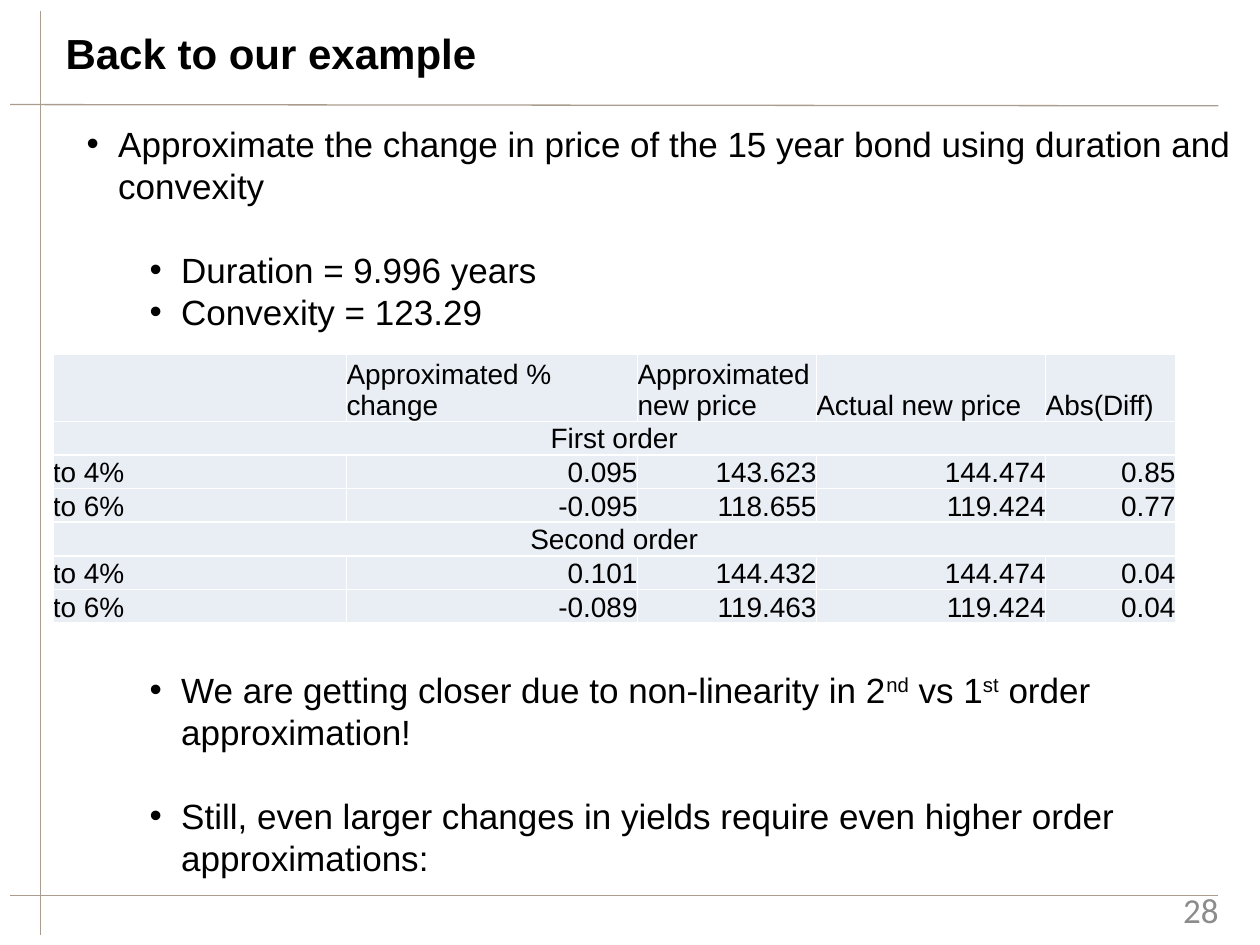
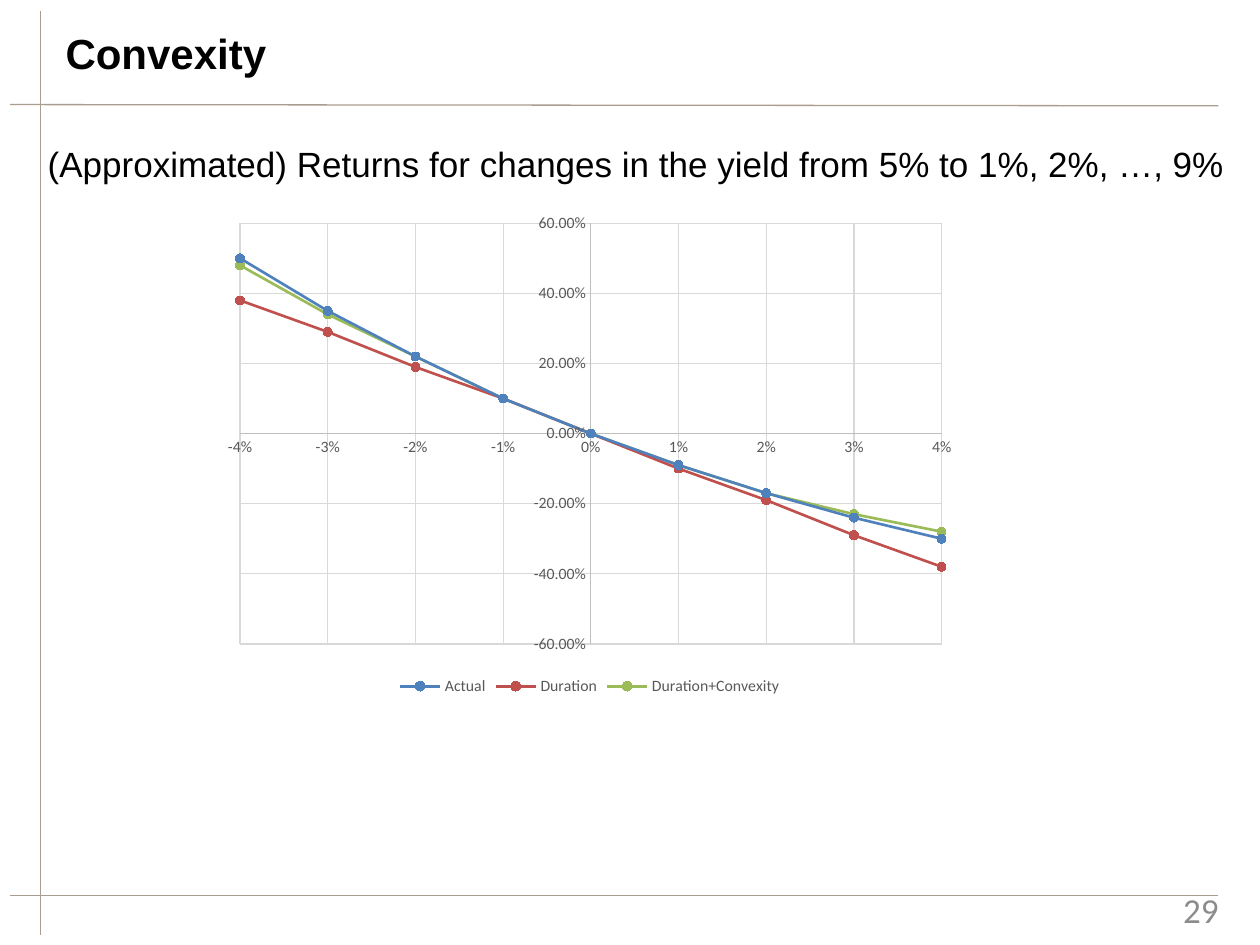
from lxml.etree import SubElement
from pptx import Presentation
from pptx.chart.data import XyChartData
from pptx.dml.color import RGBColor
from pptx.enum.chart import (XL_CHART_TYPE as ChartType, XL_LEGEND_POSITION as LegendPosition,
                             XL_MARKER_STYLE as MarkerStyle, XL_TICK_MARK as TickMark)
from pptx.enum.shapes import MSO_CONNECTOR as Connector
from pptx.enum.text import MSO_ANCHOR as Anchor, MSO_AUTO_SIZE as AutoSize, PP_ALIGN as Align
from pptx.oxml.ns import qn
from pptx.util import Inches, Pt

# Shared look
BLACK, RULE, PAGE_GREY = "000000", "AA9C8F", "8C8C8C"
CELL, WHITE = "E9EDF4", "FFFFFF"
CHART_TEXT, AXIS, GRID = "595959", "BFBFBF", "D9D9D9"
BODY_FONT, CHART_FONT = "Arial", "Calibri"
BODY_SIZE, LINE_PITCH = 20, 24
RULES = [(3.2, 0.9, 3.2, 74.2), (0.8, 8.3, 96.7, 8.4), (0.8, 71.1, 96.7, 71.1)]

# Table and chart content
COLUMN_WIDTHS = [23.3, 23.1, 14.2, 18.2, 10.3]
TABLE_ROWS = [
    ["", "Approximated % change", "Approximated new price", "Actual new price", "Abs(Diff)"],
    ["First order"],
    ["to 4%", "0.095", "143.623", "144.474", "0.85"],
    ["to 6%", "-0.095", "118.655", "119.424", "0.77"],
    ["Second order"],
    ["to 4%", "0.101", "144.432", "144.474", "0.04"],
    ["to 6%", "-0.089", "119.463", "119.424", "0.04"],
]
YIELD_CHANGES = [step / 100 for step in range(-4, 5)]
RETURNS = [
    ("Actual", "4F81BD", [0.5, 0.35, 0.22, 0.1, 0, -0.09, -0.17, -0.24, -0.3]),
    ("Duration", "C0504D", [0.38, 0.29, 0.19, 0.1, 0, -0.1, -0.19, -0.29, -0.38]),
    ("Duration+Convexity", "9BBB59", [0.48, 0.34, 0.22, 0.1, 0, -0.09, -0.17, -0.23, -0.28]),
]


def grid(*cells):
    """Lengths on a grid of 100 columns by 75 rows over the slide."""
    return [Inches(cell / 10) for cell in cells]


def color(value):
    return RGBColor.from_string(value)


def style_font(font, size, value=BLACK, name=BODY_FONT, bold=False):
    font.size, font.name, font.bold = Pt(size), name, bold
    font.color.rgb = color(value)


def style_line(line, value, width=0.75):
    line.color.rgb = color(value)
    line.width = Pt(width)


def add_run(paragraph, text, size=BODY_SIZE, raised=False, **style):
    run = paragraph.add_run()
    run.text = text
    style_font(run.font, size, **style)
    if raised:
        run.font._element.set("baseline", "30000")


def add_text_box(slide, *cells):
    frame = slide.shapes.add_textbox(*grid(*cells)).text_frame
    frame.word_wrap = True
    return frame


def add_rule(slide, *ends):
    rule = slide.shapes.add_connector(Connector.STRAIGHT, *grid(*ends))
    style_line(rule.line, RULE)
    SubElement(rule._element.spPr, qn("a:effectLst"))


def add_slide(presentation, title, number):
    slide = presentation.slides.add_slide(presentation.slide_layouts[5])
    for ends in RULES:
        add_rule(slide, *ends)

    # Page number
    frame = add_text_box(slide, 74.4, 70.8, 23.3, 2.7)
    frame.vertical_anchor = Anchor.MIDDLE
    frame.paragraphs[0].alignment = Align.RIGHT
    add_run(frame.paragraphs[0], str(number), value=PAGE_GREY, name=CHART_FONT)

    # Title
    shape = slide.shapes.title
    shape.left, shape.top, shape.width, shape.height = grid(4.2, 1.7, 83.3, 5)
    shape.text_frame.auto_size = AutoSize.NONE
    shape.text_frame.vertical_anchor = Anchor.BOTTOM
    paragraph = shape.text_frame.paragraphs[0]
    paragraph.alignment = Align.LEFT
    add_run(paragraph, title, size=24, bold=True)
    return slide


def add_bullet(frame, runs, level=0, lines_before=0):
    first = not frame.paragraphs[0].runs
    paragraph = frame.paragraphs[0] if first else frame.add_paragraph()
    paragraph.level = level
    properties = paragraph._p.get_or_add_pPr()
    properties.set("marL", str(Inches(0.25 + 0.5 * level)))
    properties.set("indent", str(Inches(-0.25)))
    SubElement(properties, qn("a:buFont"), typeface=BODY_FONT)
    SubElement(properties, qn("a:buChar"), char="•")
    paragraph.line_spacing = Pt(LINE_PITCH)
    paragraph.space_before = Pt(lines_before * LINE_PITCH)
    for text, raised in runs:
        add_run(paragraph, text, raised=raised)


def style_cell(cell):
    cell.margin_left = cell.margin_right = cell.margin_top = cell.margin_bottom = 0
    cell.vertical_anchor = Anchor.BOTTOM
    properties = cell._tc.get_or_add_tcPr()
    for side in ("lnL", "lnR", "lnT", "lnB"):
        border = SubElement(properties, qn(f"a:{side}"), w=str(Pt(1)))
        SubElement(SubElement(border, qn("a:solidFill")), qn("a:srgbClr"), val=WHITE)
    cell.fill.solid()
    cell.fill.fore_color.rgb = color(CELL)


def add_price_table(slide):
    height = 21.3
    row_height = height / (len(TABLE_ROWS) + 1)  # the heading takes two lines
    table = slide.shapes.add_table(len(TABLE_ROWS), len(COLUMN_WIDTHS),
                                   *grid(4.2, 28.1, sum(COLUMN_WIDTHS), height)).table
    table.first_row = table.horz_banding = False
    for column, width in zip(table.columns, COLUMN_WIDTHS):
        column.width, = grid(width)
    for row_index, texts in enumerate(TABLE_ROWS):
        table.rows[row_index].height, = grid(row_height * (2 if row_index == 0 else 1))
        for cell in table.rows[row_index].cells:
            style_cell(cell)
        is_section = len(texts) == 1
        if is_section:
            table.cell(row_index, 0).merge(table.cell(row_index, len(COLUMN_WIDTHS) - 1))
        for column_index, text in enumerate(texts):
            paragraph = table.cell(row_index, column_index).text_frame.paragraphs[0]
            if is_section:
                paragraph.alignment = Align.CENTER
            elif row_index and column_index:
                paragraph.alignment = Align.RIGHT
            if text:
                add_run(paragraph, text, size=16)


def style_axis(axis, limit, step, number_format):
    axis.minimum_scale, axis.maximum_scale, axis.major_unit = -limit, limit, step
    axis.major_tick_mark = axis.minor_tick_mark = TickMark.NONE
    axis.has_major_gridlines = True
    style_line(axis.major_gridlines.format.line, GRID)
    style_line(axis.format.line, AXIS)
    style_font(axis.tick_labels.font, 9, CHART_TEXT, CHART_FONT)
    axis.tick_labels.number_format = number_format
    axis.tick_labels.number_format_is_linked = False


def add_returns_chart(slide):
    data = XyChartData()
    for name, _, returns in RETURNS:
        series = data.add_series(name)
        for change, value in zip(YIELD_CHANGES, returns):
            series.add_data_point(change, value)
    chart = slide.shapes.add_chart(ChartType.XY_SCATTER_LINES,
                                   *grid(16.9, 16.2, 59.8, 39.4), data).chart
    style_font(chart.font, 10, name=CHART_FONT)
    chart.has_title = False
    chart.plots[0].vary_by_categories = False
    style_axis(chart.category_axis, 0.04, 0.01, "0%")
    style_axis(chart.value_axis, 0.6, 0.2, "0.00%")

    chart.has_legend = True
    chart.legend.position = LegendPosition.BOTTOM
    chart.legend.include_in_layout = False
    style_font(chart.legend.font, 9, CHART_TEXT, CHART_FONT)

    for series, (_, value, _) in zip(chart.plots[0].series, RETURNS):
        series.smooth = False
        style_line(series.format.line, value, 1.5)
        series.marker.style, series.marker.size = MarkerStyle.CIRCLE, 5
        series.marker.format.fill.solid()
        series.marker.format.fill.fore_color.rgb = color(value)
        style_line(series.marker.format.line, value)


def build_example_slide(presentation):
    slide = add_slide(presentation, "Back to our example", 28)
    frame = add_text_box(slide, 5.9, 9.2, 93.3, 59.1)
    add_bullet(frame, [("Approximate the change in price of the 15 year bond using "
                        "duration and convexity", False)])
    add_bullet(frame, [("Duration = 9.996 years", False)], level=1, lines_before=1)
    add_bullet(frame, [("Convexity = 123.29", False)], level=1)
    # The table stands in this gap
    add_bullet(frame, [("We are getting closer due to non-linearity in 2", False), ("nd", True),
                       (" vs 1", False), ("st", True), (" order approximation!", False)],
               level=1, lines_before=8)
    add_bullet(frame, [("Still, even larger changes in yields require even higher order "
                        "approximations:", False)], level=1, lines_before=1)
    add_price_table(slide)


def build_convexity_slide(presentation):
    slide = add_slide(presentation, "Convexity", 29)
    paragraph = add_text_box(slide, 2.8, 10.8, 96, 56.7).paragraphs[0]
    paragraph.line_spacing = Pt(LINE_PITCH)
    add_run(paragraph, "(Approximated) Returns for changes in the yield "
                       "from 5% to 1%, 2%, …, 9%")
    add_returns_chart(slide)


def main():
    presentation = Presentation()
    presentation.slide_width, presentation.slide_height = grid(100, 75)
    build_example_slide(presentation)
    build_convexity_slide(presentation)
    presentation.save("out.pptx")


if __name__ == "__main__":
    main()
